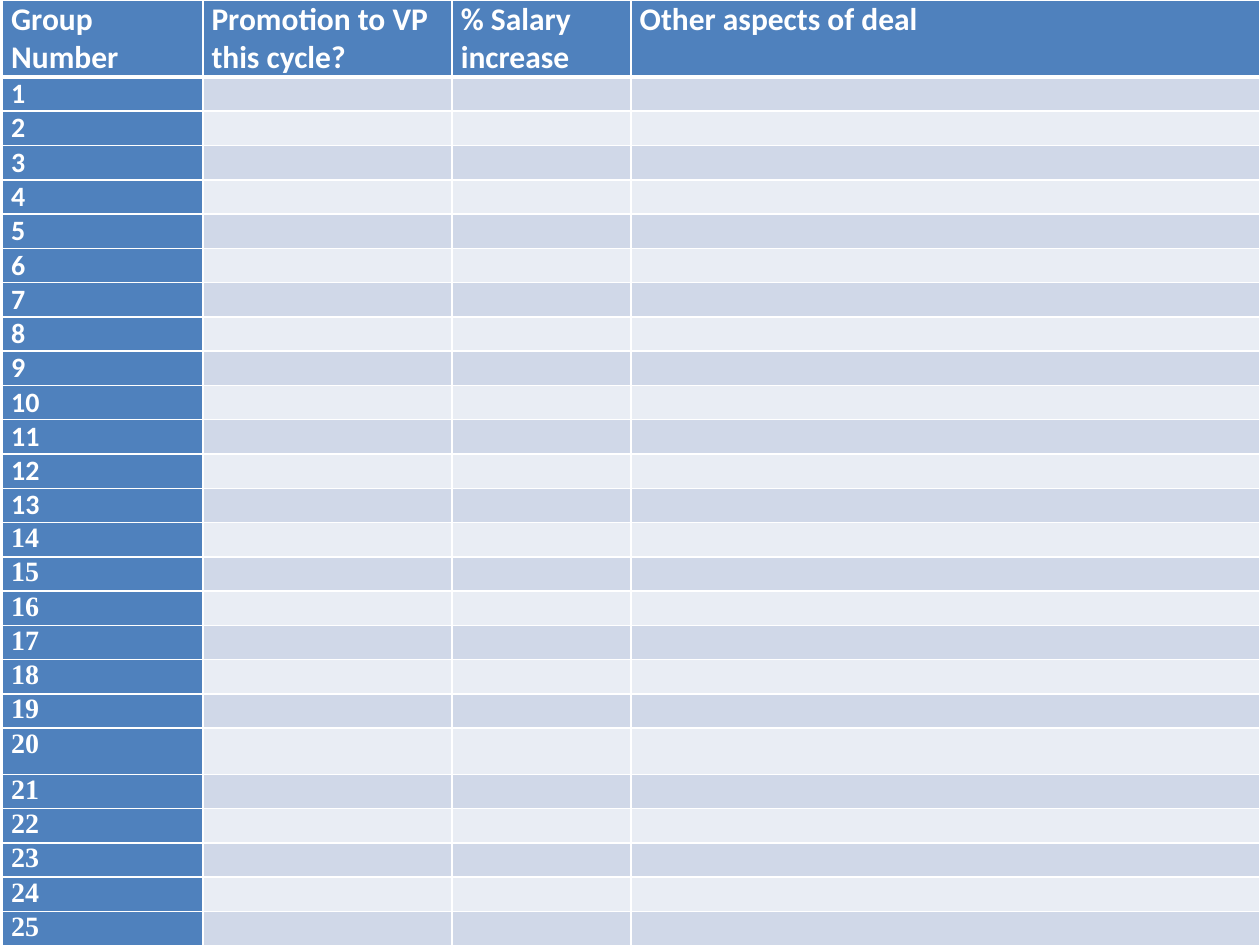
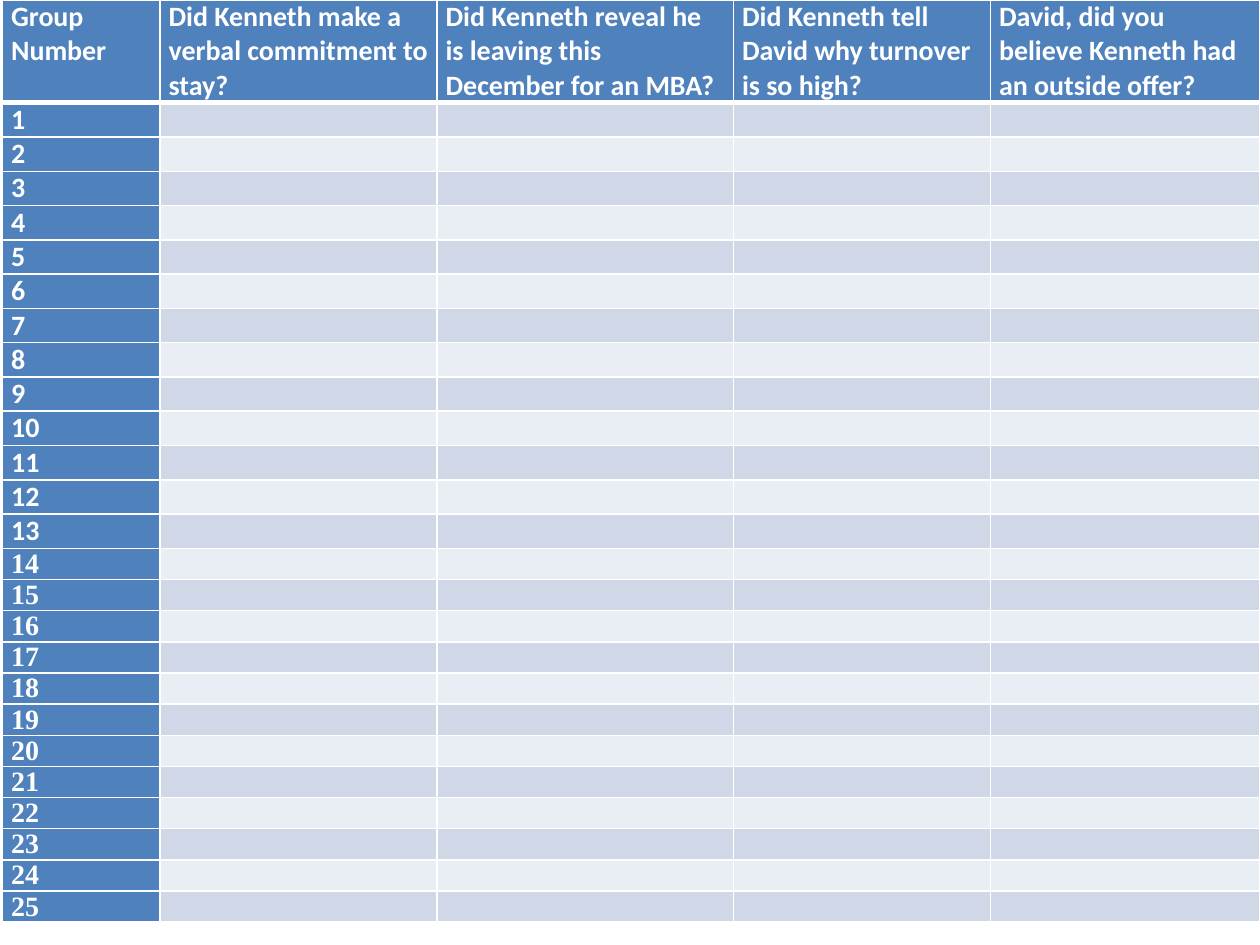
"""Build two group-result sheets for a negotiation exercise."""
from dataclasses import dataclass, field
from typing import Any

from lxml.etree import SubElement as Sub
from pptx import Presentation
from pptx.dml.color import RGBColor as RGB
from pptx.oxml.ns import qn
from pptx.util import Pt

BLUE, WHITE = "4F81BD", "FFFFFF"
BANDS = ("E9EDF4", "D0D8E8")
SANS, SERIF = "Calibri", "Times New Roman"
GROUPS, LAST_SANS = 25, 13
BODY_SIZE, EMPTY_SIZE = 16, 12
THIN, THICK = 1, 3
MARGINS = {"margin_left": Pt(5), "margin_right": Pt(5),
           "margin_top": 0, "margin_bottom": 0}


@dataclass(frozen=True)
class Sheet:
    """One slide-filling table with a numbered row per group."""
    heads: tuple[str, ...]
    widths: tuple[float, ...]
    height: float
    head_size: int
    head_height: float
    row_height: float
    tall_rows: dict[int, float] = field(default_factory=dict)


SHEETS = (
    Sheet(("Group Number", "Promotion to VP this cycle?", "% Salary increase",
           "Other aspects of deal"),
          (114.5, 142.5, 102.2, 359.5), 540, 18, 43.9, 19.6, {20: 26.4}),
    Sheet(("Group Number", "Did Kenneth make a verbal commitment to stay?",
           "Did Kenneth reveal he is leaving this December for an MBA?",
           "Did Kenneth tell David why turnover is so high?",
           "David, did you believe Kenneth had an outside offer?"),
          (90, 158.3, 169.4, 146.9, 154.1), 537.8, 16, 50.4, 16.6),
)


def color(value: str) -> RGB:
    """Turn a hex string into a colour."""
    return RGB.from_string(value)


def set_all(obj: Any, values: dict[str, Any]) -> None:
    """Set every attribute named in values."""
    for name, value in values.items():
        setattr(obj, name, value)


def add_borders(cell: Any, top: float, bottom: float) -> None:
    """Draw white borders, which must precede the fill in the cell XML."""
    tc_pr = cell._tc.get_or_add_tcPr()
    sides = {"lnL": THIN, "lnR": THIN, "lnT": top, "lnB": bottom}
    for i, (tag, width) in enumerate(sides.items()):
        ln = Sub(tc_pr, qn(f"a:{tag}"), w=str(Pt(width)))
        Sub(Sub(ln, qn("a:solidFill")), qn("a:srgbClr"), val=WHITE)
        tc_pr.insert(i, ln)


def fill_cell(cell: Any, row: int, fill: str) -> None:
    """Give a cell its margins, fill and borders."""
    set_all(cell, MARGINS)
    cell.fill.solid()
    cell.fill.fore_color.rgb = color(fill)
    add_borders(cell, THICK if row == 1 else THIN, THICK if row == 0 else THIN)


def write(cell: Any, text: str, size: int, font: str) -> None:
    """Write bold white text, or keep an empty cell low."""
    p = cell.text_frame.paragraphs[0]
    if not text:
        Sub(p._p, qn("a:endParaRPr"), sz=str(EMPTY_SIZE * 100))
        return
    r = p.add_run()
    r.text = text
    set_all(r.font, {"size": Pt(size), "name": font, "bold": True})
    r.font.color.rgb = color(WHITE)


def add_sheet(prs: Any, sheet: Sheet) -> None:
    """Add a slide that holds one sheet."""
    s = prs.slides.add_slide(prs.slide_layouts[6])
    frame = s.shapes.add_table(GROUPS + 1, len(sheet.heads), Pt(1.4), 0,
                               Pt(sum(sheet.widths)), Pt(sheet.height))
    table = frame.table
    set_all(table, {"first_row": True, "first_col": True, "horz_banding": True})
    for col, width in zip(table.columns, sheet.widths):
        col.width = Pt(width)
    for n, row in enumerate(table.rows):
        height = sheet.tall_rows.get(n, sheet.row_height) if n else sheet.head_height
        row.height = Pt(height)
        texts = (str(n),) + ("",) * (len(sheet.heads) - 1) if n else sheet.heads
        size = BODY_SIZE if n else sheet.head_size
        font = SANS if n <= LAST_SANS else SERIF
        for c, (cell, text) in enumerate(zip(row.cells, texts)):
            fill_cell(cell, n, BLUE if n == 0 or c == 0 else BANDS[n % 2])
            write(cell, text, size, font)
    frame.height = Pt(sheet.height)


def main() -> None:
    """Build and save the slides."""
    prs = Presentation()
    set_all(prs, {"slide_width": Pt(720), "slide_height": Pt(540)})
    for sheet in SHEETS:
        add_sheet(prs, sheet)
    prs.save("out.pptx")


if __name__ == "__main__":
    main()
